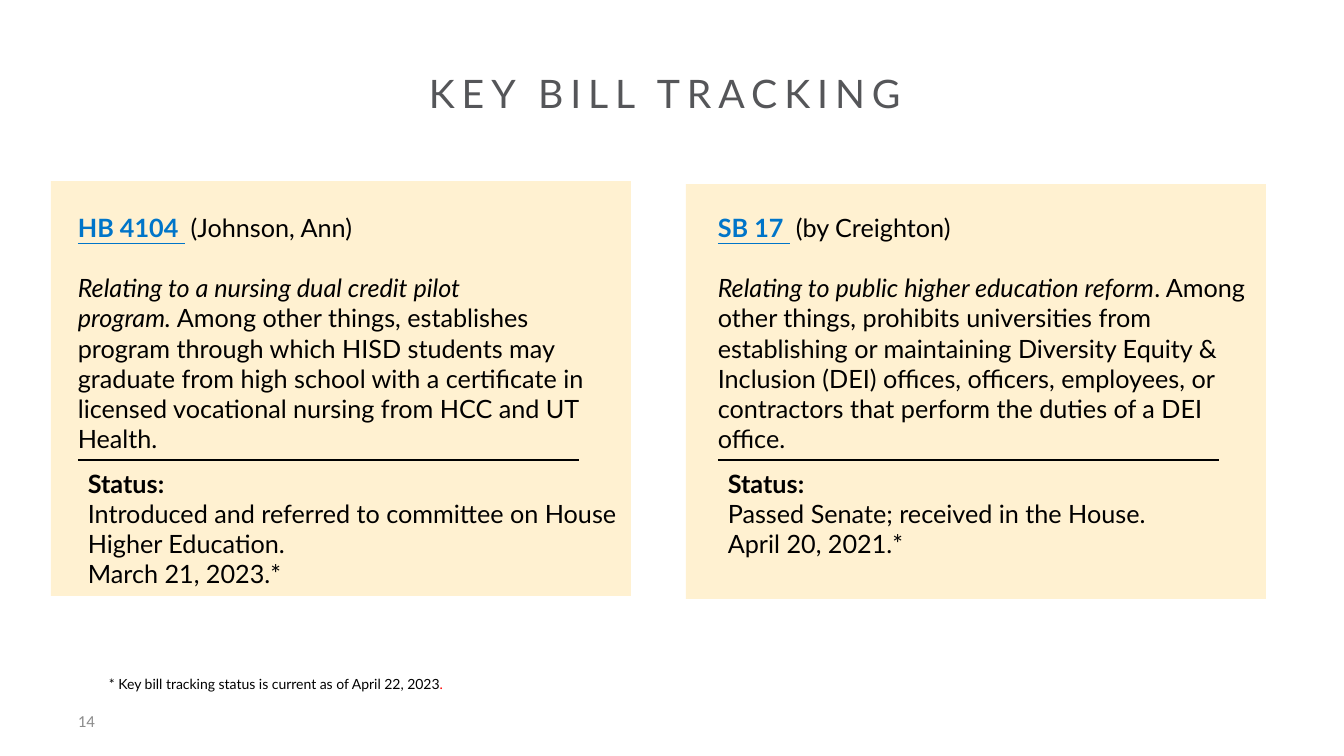
"""Build the key bill tracking slide with two bill cards."""
import pptx
import pptx.dml.color
import pptx.enum.shapes
import pptx.enum.text
import pptx.util
from lxml import etree

SCALE = 914400 / 100.8
BLACK = "000000"
BLUE = "0075C9"


def px(n):
    return pptx.util.Emu(round(n * SCALE))


def write(sp, paras, size, font="Lato"):
    tf = sp.text_frame
    tf.word_wrap = True
    tf.auto_size = pptx.enum.text.MSO_AUTO_SIZE.NONE
    for i, runs in enumerate(paras):
        p = tf.paragraphs[0] if i == 0 else tf.add_paragraph()
        for text, color, style in runs:
            r = p.add_run()
            r.text = text
            r.font.size = pptx.util.Pt(size)
            r.font.name = font
            r.font.color.rgb = pptx.dml.color.RGBColor.from_string(color)
            r.font.bold = "b" in style
            r.font.italic = "i" in style
            r.font.underline = "u" in style
    return tf


prs = pptx.Presentation()
prs.slide_width, prs.slide_height = px(1344), px(756)
s = prs.slides.add_slide(prs.slide_layouts[5])

title = s.shapes.title
title.left, title.top, title.width, title.height = px(68), px(70), px(1211), px(57)
tf = write(title, [[("KEY BILL TRACKING ", "555659", "")]], 28)
tf.vertical_anchor = pptx.enum.text.MSO_ANCHOR.TOP
p = tf.paragraphs[0]
p.alignment = pptx.enum.text.PP_ALIGN.CENTER
p.line_spacing = 0.9
p.runs[0].font._element.set("spc", "500")

cards = [
    {
        "card": (51, 181), "text_left": 68, "text_height": 254, "status_size": (566, 132),
        "bill": "HB 4104 ", "author": "(Johnson, Ann)",
        "summary": [
            [("Relating to a nursing dual credit pilot", BLACK, "i")],
            [("program. ", BLACK, "i"), ("Among other things, establishes", BLACK, "")],
            [("program through which HISD students may", BLACK, "")],
            [("graduate from high school with a certificate in", BLACK, "")],
            [("licensed vocational nursing from HCC and UT", BLACK, "")],
            [("Health.", BLACK, "")],
        ],
        "status": ["Introduced and referred to committee on House", "Higher Education.",
                   "March 21, 2023.*"],
    },
    {
        "card": (686, 184), "text_left": 708, "text_height": 302, "status_size": (501, 102),
        "bill": "SB 17 ", "author": "(by Creighton)",
        "summary": [
            [("Relating to public higher education reform", BLACK, "i"),
             (". Among other things, prohibits universities from establishing or maintaining "
              "Diversity Equity & Inclusion (DEI) offices, officers, employees, or contractors "
              "that perform the duties of a DEI office.", BLACK, "")],
        ],
        "status": ["Passed Senate; received in the House.", "April 20, 2021.*"],
    },
]

for card in cards:
    left, top = card["card"]
    sp = s.shapes.add_shape(pptx.enum.shapes.MSO_SHAPE.RECTANGLE,
                            px(left), px(top), px(580), px(415))
    sp.shadow.inherit = False
    sp.fill.solid()
    sp.fill.fore_color.rgb = pptx.dml.color.RGBColor.from_string("FFF1D1")
    sp.line.fill.background()

    x = card["text_left"]
    heading = [(card["bill"], BLUE, "bu"), (" ", BLACK, "b"), (card["author"], BLACK, "")]
    box = s.shapes.add_textbox(px(x), px(207), px(564), px(card["text_height"]))
    tf = write(box, [heading] + card["summary"], 18)
    tf.paragraphs[1].space_before = pptx.util.Pt(21.6)

    width, height = card["status_size"]
    box = s.shapes.add_textbox(px(x + 10), px(463), px(width), px(height))
    write(box, [[("Status:", BLACK, "b")]] + [[(line, BLACK, "")] for line in card["status"]], 18)

    rule = s.shapes.add_connector(pptx.enum.shapes.MSO_CONNECTOR.STRAIGHT,
                                  px(x + 10), px(460), px(x + 511), px(460))
    rule.line.color.rgb = pptx.dml.color.RGBColor.from_string(BLACK)
    rule.line.width = pptx.util.Pt(1.5)
    etree.SubElement(rule._element.spPr, pptx.oxml.ns.qn("a:effectLst"))

footnote = s.shapes.add_textbox(px(99), px(671), px(640), px(27))
write(footnote, [[("* Key bill tracking status is current as of April 22, 2023", BLACK, ""),
                  (".", "FF0000", "")]], 10)

number = s.shapes.add_textbox(px(68), px(701), px(302), px(40))
tf = write(number, [[("14", "8C8C8C", "")]], 12, "Calibri")
tf.vertical_anchor = pptx.enum.text.MSO_ANCHOR.MIDDLE

prs.save("out.pptx")
